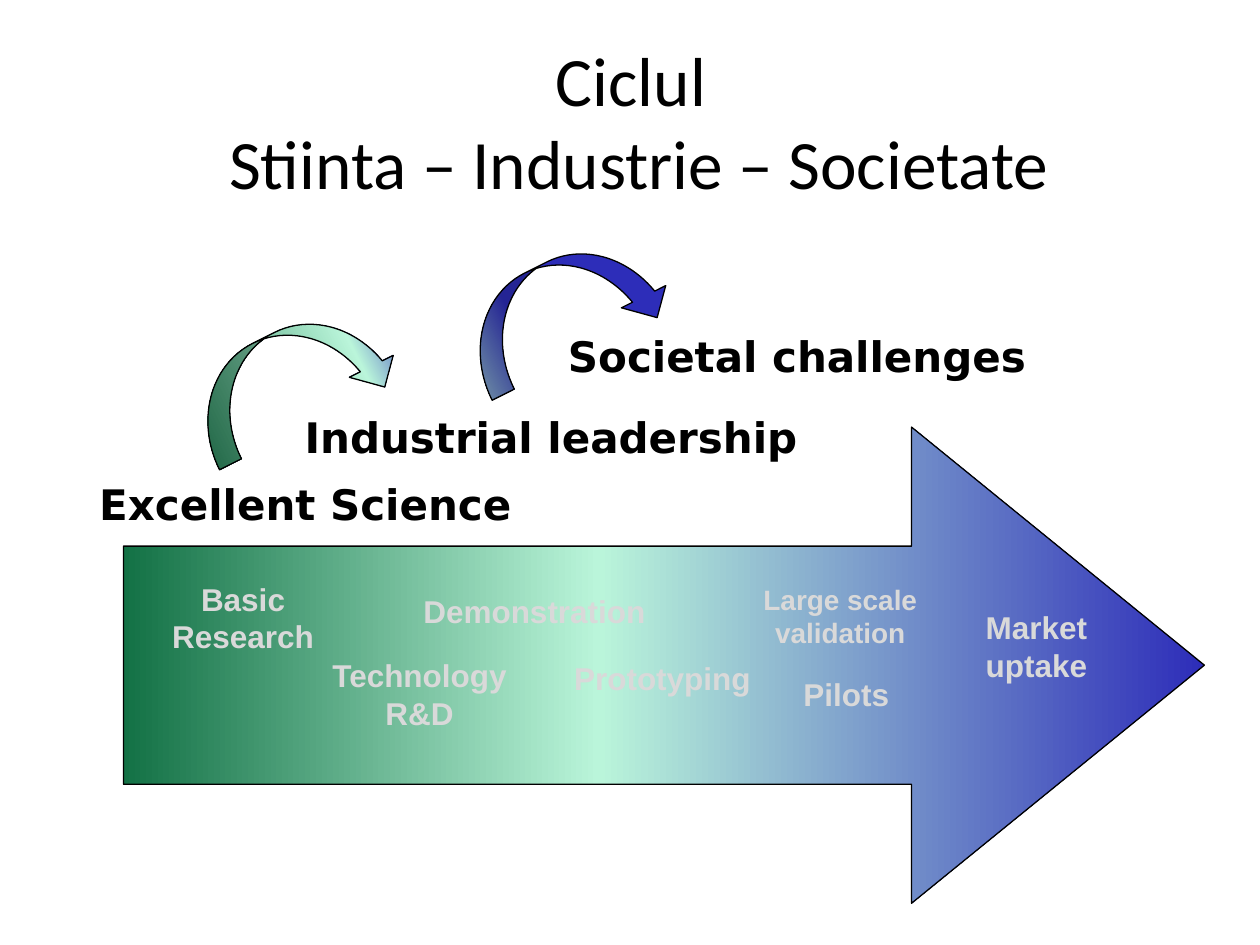
from copy import deepcopy

from pptx import Presentation
from pptx.dml.color import RGBColor
from pptx.enum.shapes import MSO_SHAPE
from pptx.enum.text import MSO_ANCHOR, MSO_AUTO_SIZE, PP_ALIGN
from pptx.util import Cm, Pt


class Theme:
    black = RGBColor(0x00, 0x00, 0x00)
    white = RGBColor(0xFF, 0xFF, 0xFF)
    pale = RGBColor(0xD9, 0xD9, 0xD9)
    # Right to left: society, industry, science
    cycle = [RGBColor(0x2D, 0x2D, 0xB9), RGBColor(0xBA, 0xF5, 0xDA), RGBColor(0x13, 0x71, 0x45)]
    title_font, pillar_font, stage_font = "Calibri", "DejaVu Sans", "Arial"
    title_size, pillar_size, stage_size, small_stage_size = 39.6, 24, 18, 16
    outline = 0.75


# Boxes are left, top, width, height in cm
TITLE = ("Ciclul \vStiinta – Industrie – Societate", (1.45, 0.84, 22.86, 3.18))
MARKET_ARROW = ((2.49, 8.61, 21.79, 9.6), (0, 0.56, 1))
STAGES = [
    (["Basic", "Research"], (3.2, 11.56, 3.4, 1.75), Theme.stage_size),
    (["Technology", "R&D"], (6.43, 13.11, 4.06, 1.75), Theme.stage_size),
    (["Demonstration"], (8.26, 11.81, 5.03, 1), Theme.stage_size),
    (["Market", "uptake"], (19.61, 12.14, 2.57, 1.75), Theme.stage_size),
    (["Large scale", "validation"], (15.11, 11.61, 3.66, 1.57), Theme.small_stage_size),
    (["Prototyping"], (11.3, 13.16, 4.11, 1.02), Theme.stage_size),
    (["Pilots"], (15.93, 13.49, 2.26, 1.02), Theme.stage_size),
]
SCIENCE = ("Excellent Science", (1.75, 9.53, 9.35, 1.27))
PILLARS = [
    ("Industrial leadership", (5.89, 8.18, 10.59, 1.3)),
    ("Societal challenges", (11.2, 6.53, 9.75, 1.3)),
]
LEAPS = [
    ((3.76, 6.65, 4.22, 1.98), (0, 0.26, 1)),
    ((9.25, 5.23, 4.22, 2), (0.67, 1, 1)),
]
LEAP_ROTATION = 333.4


def place(box):
    return [Cm(length) for length in box]


def write(shape, lines, font, size, color, bold=True, align=PP_ALIGN.LEFT, wrap=False):
    frame = shape.text_frame
    frame.word_wrap = wrap
    frame.auto_size = MSO_AUTO_SIZE.SHAPE_TO_FIT_TEXT
    frame.vertical_anchor = MSO_ANCHOR.TOP
    frame.text = "\n".join(lines)
    for paragraph in frame.paragraphs:
        paragraph.alignment = align
        paragraph.font.name = font
        paragraph.font.size = Pt(size)
        paragraph.font.bold = bold
        paragraph.font.color.rgb = color


def add_cycle_arrow(slide, kind, box, positions):
    """Add an arrow shaded through the cycle colours from right to left."""
    arrow = slide.shapes.add_shape(kind, *place(box))
    arrow.shadow.inherit = False
    arrow.line.color.rgb = Theme.black
    arrow.line.width = Pt(Theme.outline)
    arrow.fill.gradient()
    arrow.fill.gradient_angle = 180
    stop_list = arrow._element.spPr.xpath("./a:gradFill/a:gsLst")[0]
    stop_list.append(deepcopy(stop_list[0]))
    for stop, position, color in zip(arrow.fill.gradient_stops, positions, Theme.cycle):
        stop.position = position
        stop.color.rgb = color
    return arrow


def main():
    deck = Presentation()
    deck.slide_width, deck.slide_height = Cm(25.4), Cm(19.05)
    slide = deck.slides.add_slide(deck.slide_layouts[6])
    shapes = slide.shapes

    heading, box = TITLE
    title = shapes.add_textbox(*place(box))
    write(title, [heading], Theme.title_font, Theme.title_size, Theme.black,
          bold=False, align=PP_ALIGN.CENTER, wrap=True)
    title.text_frame.auto_size = MSO_AUTO_SIZE.NONE
    title.text_frame.vertical_anchor = MSO_ANCHOR.MIDDLE

    market_arrow = add_cycle_arrow(slide, MSO_SHAPE.RIGHT_ARROW, *MARKET_ARROW)
    market_arrow.adjustments[0] = 0.5
    market_arrow.adjustments[1] = 0.615

    for lines, box, size in STAGES:
        write(shapes.add_textbox(*place(box)), lines, Theme.stage_font, size,
              Theme.pale, align=PP_ALIGN.CENTER)

    pillar_style = (Theme.pillar_font, Theme.pillar_size, Theme.black)
    label, box = SCIENCE
    science = shapes.add_shape(MSO_SHAPE.RECTANGLE, *place(box))
    science.shadow.inherit = False
    science.fill.solid()
    science.fill.fore_color.rgb = Theme.white
    science.line.fill.background()
    write(science, [label], *pillar_style, wrap=True)

    for label, box in PILLARS:
        write(shapes.add_textbox(*place(box)), [label], *pillar_style)

    for box, positions in LEAPS:
        leap = add_cycle_arrow(slide, MSO_SHAPE.CURVED_DOWN_ARROW, box, positions)
        leap.rotation = LEAP_ROTATION

    deck.save("out.pptx")


if __name__ == "__main__":
    main()
